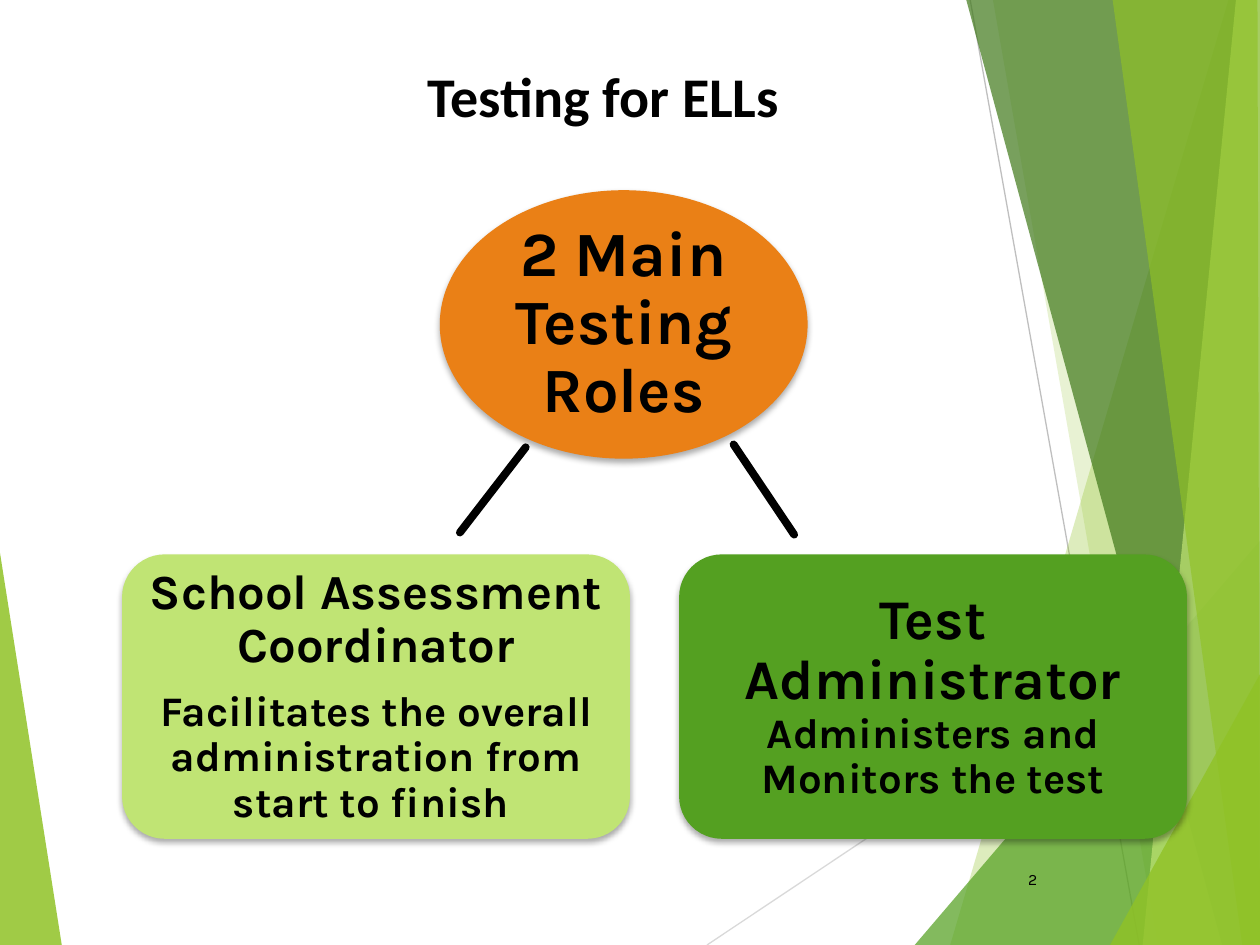
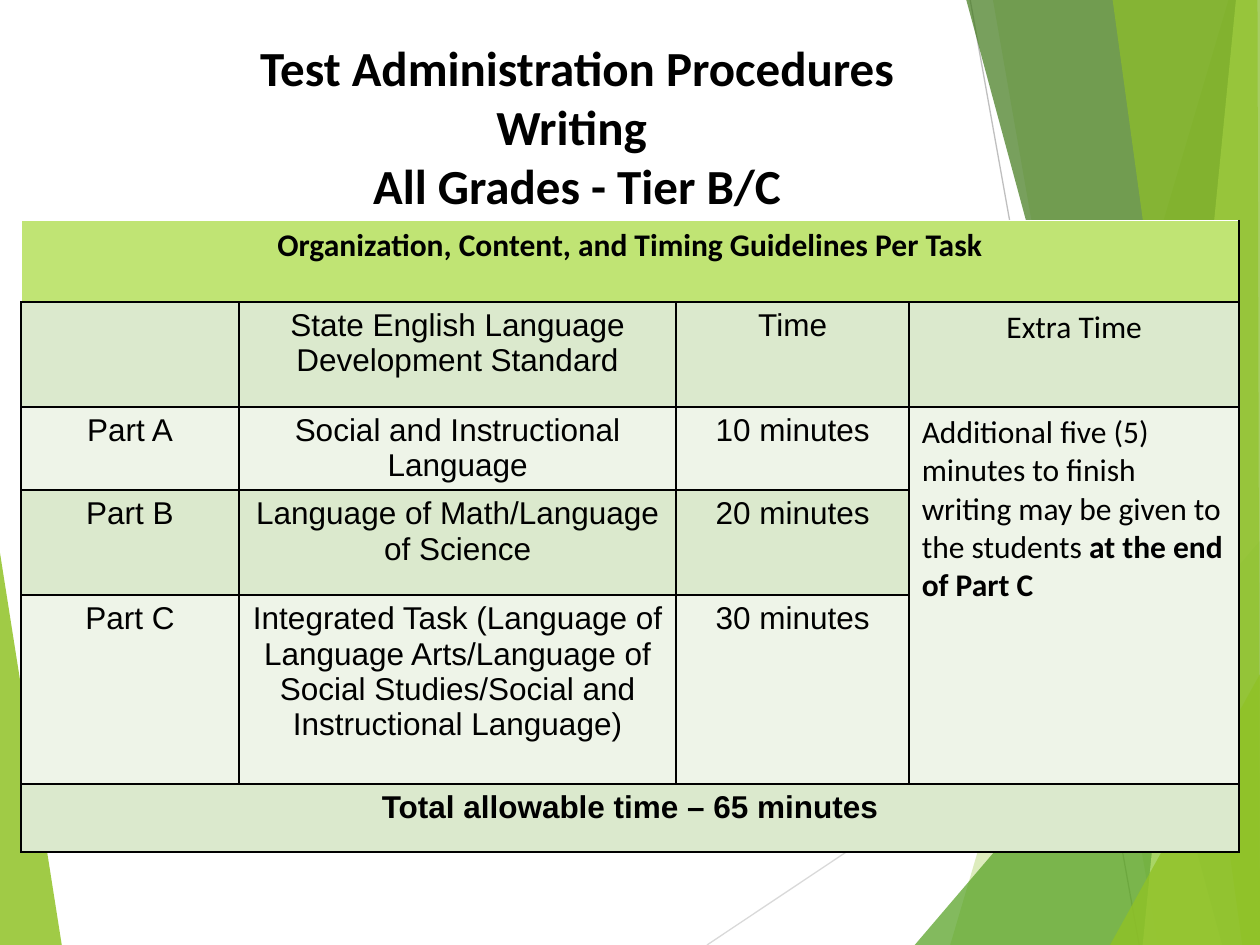
"""Build two slides on English learner testing roles and writing test timing."""

from dataclasses import dataclass
from typing import NamedTuple

from lxml import etree
from pptx import Presentation
from pptx.dml.color import RGBColor
from pptx.enum.shapes import MSO_CONNECTOR, MSO_SHAPE
from pptx.enum.text import MSO_ANCHOR, PP_ALIGN
from pptx.oxml.ns import qn
from pptx.util import Pt

CENTER, LEFT, RIGHT = PP_ALIGN.CENTER, PP_ALIGN.LEFT, PP_ALIGN.RIGHT
TOP, MIDDLE = MSO_ANCHOR.TOP, MSO_ANCHOR.MIDDLE
OVAL, ROUNDED = MSO_SHAPE.OVAL, MSO_SHAPE.ROUNDED_RECTANGLE
STRAIGHT = MSO_CONNECTOR.STRAIGHT


@dataclass(frozen=True)
class Theme:
    width: int = 720
    height: int = 540
    black: str = "000000"
    white: str = "FFFFFF"
    lime: str = "90C226"
    green: str = "54A021"
    dark_green: str = "3F7819"
    pale_lime: str = "C0E474"
    orange: str = "EA8016"
    light_gray: str = "D9D9D9"
    gray: str = "BFBFBF"
    row_dark: str = "DBE9CD"
    row_light: str = "EEF4E8"
    heading: str = "Calibri"
    diagram: str = "Karla"
    body: str = "Arial"
    title_size: int = 32
    long_title_size: int = 28
    center_size: int = 36
    coordinator_size: int = 28
    administrator_size: int = 32
    detail_size: int = 24
    table_size: int = 18
    number_size: int = 9


T = Theme()


class Box(NamedTuple):
    left: float
    top: float
    width: float
    height: float


class Facet(NamedTuple):
    color: str
    opacity: int
    points: tuple[tuple[float, float], ...]


class Rule(NamedTuple):
    start: tuple[float, float]
    end: tuple[float, float]
    color: str
    weight: float


class Run(NamedTuple):
    text: str
    size: float
    bold: bool = True


class Role(NamedTuple):
    shape: int
    box: Box
    fill: str
    margin: float
    paragraphs: list[list[Run]]


class Cell(NamedTuple):
    row: int
    col: int
    runs: list[Run]
    font: str = T.body
    align: int = CENTER


W, H = T.width, T.height
BACK_RULES = [
    Rule((404, H), (W, 329), T.light_gray, 0.75),
    Rule((554.4, 0), (651, H), T.gray, 0.75),
]
LEFT_FACET = Facet(T.lime, 85, ((0, 316), (35.3, H), (0, H)))
RIGHT_FACETS = [
    Facet(T.lime, 30, ((702, 0), (543, H), (W, H), (W, 0))),
    Facet(T.lime, 20, ((567.4, 0), (661.7, H), (W, H), (W, 0))),
    Facet(T.green, 72, ((522.7, H), (W, 309), (W, H))),
    Facet(T.dark_green, 70, ((552.2, 0), (698.4, H), (W, H), (W, 0))),
    Facet(T.pale_lime, 70, ((706.3, 0), (653, H), (W, H), (W, 0))),
    Facet(T.lime, 65, ((635.8, 0), (709.9, H), (W, H), (718.6, 0))),
    Facet(T.lime, 80, ((634.3, H), (W, 385.2), (W, H))),
]

ROLES = [
    Role(ROUNDED, Box(69.8, 316.8, 290.2, 162.5), T.pale_lime, 4.4, [
        [Run("School Assessment Coordinator", T.coordinator_size)],
        [Run("Facilitates the overall administration from start to finish ", T.detail_size)],
    ]),
    Role(ROUNDED, Box(388.1, 316.8, 290.2, 162.5), T.green, 4.4, [
        [Run("Test Administrator ", T.administrator_size),
         Run("Administers and Monitors the test", T.detail_size)],
    ]),
    Role(OVAL, Box(251.3, 108.7, 210.2, 153.4), T.orange, 11.5, [
        [Run("2 Main Testing Roles", T.center_size)],
    ]),
]
ROLE_LINKS = [
    Rule((419.2, 254), (453.8, 305.5), T.black, 4.5),
    Rule((300.4, 255.6), (262.8, 304.3), T.black, 4.5),
]

COL_WIDTHS = [124.6, 249.8, 133.2, 188.6]
ROW_HEIGHTS = [46.5, 60, 47, 60, 108, 39]
MERGES = [((0, 0), (0, 3)), ((2, 3), (4, 3)), ((5, 0), (5, 3))]
PARTS = [
    ("Part A", "Social and Instructional Language", "10 minutes"),
    ("Part B", "Language of Math/Language of Science", "20 minutes"),
    ("Part C", "Integrated Task (Language of Language Arts/Language of Social "
               "Studies/Social and Instructional Language)", "30 minutes"),
]


def plain(text: str, bold: bool = False) -> list[Run]:
    return [Run(text, T.table_size, bold)]


CELLS = [
    Cell(0, 0, plain("Organization, Content, and Timing Guidelines Per Task", True), T.heading),
    Cell(1, 1, plain("State English Language Development Standard")),
    Cell(1, 2, plain("Time")),
    Cell(1, 3, plain("Extra Time"), T.heading),
    *(Cell(row, col, plain(text))
      for row, part in enumerate(PARTS, 2) for col, text in enumerate(part)),
    Cell(2, 3, plain("Additional five (5) minutes to finish writing may be given to the students ")
         + plain("at the end of Part C", True), T.heading, LEFT),
    Cell(5, 0, plain("Total allowable time – 65 minutes", True)),
]


def rgb(color: str) -> RGBColor:
    return RGBColor.from_string(color)


def sub(parent, tag: str, **attrs):
    return etree.SubElement(parent, qn(tag), {k: str(v) for k, v in attrs.items()})


def write(tf, paragraphs: list[list[Run]], font: str, align: int,
          line_spacing: float | None = None, space_after: float = 0) -> None:
    for i, runs in enumerate(paragraphs):
        p = tf.paragraphs[0] if i == 0 else tf.add_paragraph()
        p.alignment = align
        p.line_spacing = line_spacing
        p.space_after = Pt(space_after)
        p.font.name = font
        p.font.color.rgb = rgb(T.black)
        p.font.size, p.font.bold = Pt(runs[0].size), runs[0].bold
        for run in runs:
            r = p.add_run()
            r.text = run.text
            if run[1:] != runs[0][1:]:
                r.font.size, r.font.bold = Pt(run.size), run.bold


def add_text(s, box: Box, paragraphs: list[list[Run]], font: str,
             align: int = CENTER, anchor: int = TOP) -> None:
    tf = s.shapes.add_textbox(*map(Pt, box)).text_frame
    tf.word_wrap = True
    tf.vertical_anchor = anchor
    write(tf, paragraphs, font, align)


def add_rule(s, rule: Rule, cap: str = "flat") -> None:
    line = s.shapes.add_connector(STRAIGHT, *map(Pt, rule.start + rule.end))
    line.line.color.rgb = rgb(rule.color)
    line.line.width = Pt(rule.weight)
    spPr = line._element.spPr
    spPr.find(qn("a:ln")).set("cap", cap)
    sub(spPr, "a:effectLst")


def add_facet(s, facet: Facet) -> None:
    start, *rest = [(Pt(x), Pt(y)) for x, y in facet.points]
    builder = s.shapes.build_freeform(*start)
    builder.add_line_segments(rest)
    sp = builder.convert_to_shape()
    sp.shadow.inherit = False
    sp.fill.solid()
    sp.fill.fore_color.rgb = rgb(facet.color)
    sp.line.fill.background()
    color = sp._element.spPr.find(qn("a:solidFill")).find(qn("a:srgbClr"))
    sub(color, "a:alpha", val=facet.opacity * 1000)


def add_role(s, role: Role) -> None:
    sp = s.shapes.add_shape(role.shape, *map(Pt, role.box))
    if role.shape == ROUNDED:
        sp.adjustments[0] = 0.15
    sp.fill.solid()
    sp.fill.fore_color.rgb = rgb(role.fill)
    sp.line.fill.background()
    sp.shadow.inherit = False
    effects = sp._element.spPr.find(qn("a:effectLst"))
    shadow = sub(effects, "a:outerShdw", blurRad=Pt(3.5), dist=Pt(2.2), dir=5400000, rotWithShape=0)
    sub(sub(shadow, "a:srgbClr", val=T.black), "a:alpha", val=32000)
    tf = sp.text_frame
    tf.word_wrap = True
    tf.vertical_anchor = MIDDLE
    tf.margin_left = tf.margin_right = tf.margin_top = tf.margin_bottom = Pt(role.margin)
    write(tf, role.paragraphs, T.diagram, CENTER, 0.9, 10)


def style_cell(cell, row: int) -> None:
    tcPr = cell._tc.get_or_add_tcPr()
    for side in "LRTB":
        color = T.white if row == 0 and side in "LT" else T.black
        ln = sub(tcPr, f"a:ln{side}", w=Pt(1))
        sub(sub(ln, "a:solidFill"), "a:srgbClr", val=color)
    cell.fill.solid()
    fill = T.pale_lime if row == 0 else T.row_dark if row % 2 else T.row_light
    cell.fill.fore_color.rgb = rgb(fill)


def add_timing_table(s) -> None:
    box = Box(12, 126, sum(COL_WIDTHS), sum(ROW_HEIGHTS))
    table = s.shapes.add_table(len(ROW_HEIGHTS), len(COL_WIDTHS), *map(Pt, box)).table
    table.first_row = table.horz_banding = False
    for column, width in zip(table.columns, COL_WIDTHS):
        column.width = Pt(width)
    for i, (row, height) in enumerate(zip(table.rows, ROW_HEIGHTS)):
        row.height = Pt(height)
        for cell in row.cells:
            style_cell(cell, i)
    for first, last in MERGES:
        table.cell(*first).merge(table.cell(*last))
    for c in CELLS:
        write(table.cell(c.row, c.col).text_frame, [c.runs], c.font, c.align)


def new_slide(prs):
    s = prs.slides.add_slide(prs.slide_layouts[6])
    add_facet(s, LEFT_FACET)
    for rule in BACK_RULES:
        add_rule(s, rule)
    for facet in RIGHT_FACETS:
        add_facet(s, facet)
    return s


def roles_slide(prs) -> None:
    s = new_slide(prs)
    add_text(s, Box(563.8, 487.4, 36, 29.5), [[Run("2", T.number_size, False)]],
             T.diagram, RIGHT, MIDDLE)
    for link in ROLE_LINKS:
        add_rule(s, link, "rnd")
    for role in ROLES:
        add_role(s, role)
    add_text(s, Box(90, 31.7, 509.8, 46), [[Run("Testing for ELLs", T.title_size)]], T.heading)


def timing_slide(prs) -> None:
    s = new_slide(prs)
    add_timing_table(s)
    lines = ["Test Administration Procedures", "Writing ", "All Grades - Tier B/C"]
    add_text(s, Box(11.5, 18, 636.5, 147.6),
             [[Run(line, T.long_title_size)] for line in lines], T.heading)


def main() -> None:
    prs = Presentation()
    prs.slide_width, prs.slide_height = Pt(T.width), Pt(T.height)
    roles_slide(prs)
    timing_slide(prs)
    prs.save("out.pptx")


if __name__ == "__main__":
    main()
